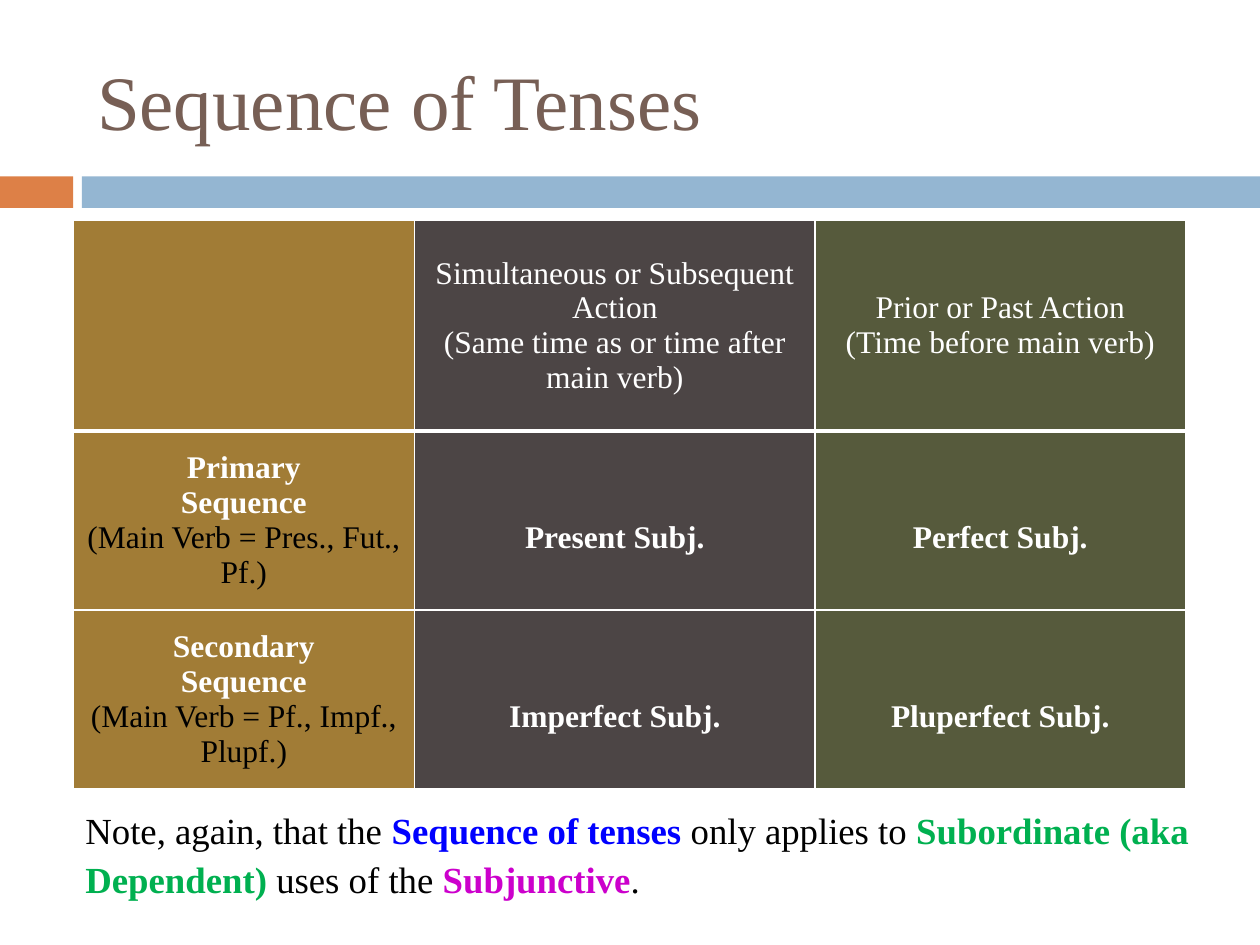
from dataclasses import dataclass

from pptx import Presentation
from pptx.dml.color import RGBColor as RGB
from pptx.enum.shapes import MSO_SHAPE as Shape
from pptx.enum.text import MSO_ANCHOR as Anchor, PP_ALIGN as Align
from pptx.oxml.ns import qn
from pptx.util import Inches, Pt
from lxml.etree import SubElement


@dataclass(frozen=True)
class Theme:
    font: str = "Times New Roman"
    title_size: int = 44
    note_size: int = 21
    cell_size: int = 18
    title: str = "775F55"
    accent: str = "DD8047"
    band: str = "94B6D2"
    columns: tuple = ("A17C36", "4C4545", "565A3C")
    white: str = "FFFFFF"
    black: str = "000000"
    blue: str = "0000FF"
    green: str = "00B050"
    magenta: str = "CC00CC"


class Builder:
    """Holds the theme and the current slide."""

    def __init__(self, theme, slide):
        self.theme = theme
        self.slide = slide

    def style(self, font, size, color, bold=False):
        font.name = self.theme.font
        font.size = Pt(size)
        font.bold = bold
        font.color.rgb = RGB.from_string(color)

    def title(self, text, *box):
        title = self.slide.shapes.title
        title.left, title.top, title.width, title.height = map(Inches, box)
        frame = title.text_frame
        frame.text = text
        frame.vertical_anchor = Anchor.MIDDLE
        heading = frame.paragraphs[0]
        heading.alignment = Align.LEFT
        self.style(heading.font, self.theme.title_size, self.theme.title)

    def bar(self, color, *box):
        bar = self.slide.shapes.add_shape(Shape.RECTANGLE, *map(Inches, box))
        bar.shadow.inherit = False
        bar.fill.solid()
        bar.fill.fore_color.rgb = RGB.from_string(color)
        bar.line.fill.background()

    def borders(self, cell, bottom):
        properties = cell._tc.get_or_add_tcPr()
        edges = {"a:lnL": 1, "a:lnR": 1, "a:lnT": 1, "a:lnB": bottom}
        for index, (edge, width) in enumerate(edges.items()):
            line = SubElement(properties, qn(edge), w=str(Pt(width)))
            fill = SubElement(line, qn("a:solidFill"))
            SubElement(fill, qn("a:srgbClr"), val=self.theme.white)
            properties.insert(index, line)

    def cell(self, cell, lines, fill, bottom):
        cell.fill.solid()
        cell.fill.fore_color.rgb = RGB.from_string(fill)
        cell.vertical_anchor = Anchor.MIDDLE
        self.borders(cell, bottom)
        cell.text = "\n".join(text for text, _, _ in lines)
        for paragraph, (_, color, bold) in zip(cell.text_frame.paragraphs, lines):
            paragraph.alignment = Align.CENTER
            self.style(paragraph.font, self.theme.cell_size, color, bold)

    def table(self, rows, widths, heights, left, top):
        box = map(Inches, (left, top, sum(widths), sum(heights)))
        table = self.slide.shapes.add_table(len(rows), len(widths), *box).table
        table.first_row = table.horz_banding = False
        for column, width in zip(table.columns, widths):
            column.width = Inches(width)
        for r, (row, height) in enumerate(zip(rows, heights)):
            table.rows[r].height = Inches(height)
            for c, (lines, fill) in enumerate(zip(row, self.theme.columns)):
                cell = table.cell(r, c)
                self.cell(cell, lines, fill, bottom=1 if r else 3)
                if r and c:  # the tense names sit half a line below the middle
                    cell.margin_top = Inches(0.33)

    def note(self, pieces, *box):
        frame = self.slide.shapes.add_textbox(*map(Inches, box)).text_frame
        frame.word_wrap = True
        sentence = frame.paragraphs[0]
        sentence.line_spacing = 1.1
        for text, color in pieces:
            run = sentence.add_run()
            run.text = text
            self.style(run.font, self.theme.note_size, color,
                       bold=color != self.theme.black)


def main():
    theme = Theme()
    deck = Presentation()
    deck.slide_width, deck.slide_height = Inches(10), Inches(7.5)
    builder = Builder(theme, deck.slides.add_slide(deck.slide_layouts[5]))

    # Heading and the band below it
    builder.title("Sequence of Tenses", 0.67, 0.25, 8.92, 1.08)
    builder.bar(theme.accent, 0, 1.4, 0.58, 0.25)
    builder.bar(theme.band, 0.65, 1.4, 9.35, 0.25)

    # Table of tenses
    def header(*lines):
        return [(text, theme.white, False) for text in lines]

    def sequence(name, verbs):
        return [(name, theme.white, True), ("Sequence", theme.white, True),
                (f"(Main Verb = {verbs})", theme.black, False)]

    def tense(name):
        return [(f"{name} Subj.", theme.white, True)]

    rows = [
        [[],
         header("Simultaneous or Subsequent Action",
                "(Same time as or time after main verb)"),
         header("Prior or Past Action", "(Time before main verb)")],
        [sequence("Primary", "Pres., Fut., Pf."),
         tense("Present"), tense("Perfect")],
        [sequence("Secondary", "Pf., Impf., Plupf."),
         tense("Imperfect"), tense("Pluperfect")],
    ]
    builder.table(rows, (2.71, 3.18, 2.94), (1.67, 1.42, 1.42), 0.58, 1.75)

    # Closing note
    builder.note([
        ("Note, again, that the ", theme.black),
        ("Sequence of tenses ", theme.blue),
        ("only applies to ", theme.black),
        ("Subordinate (aka Dependent)", theme.green),
        (" uses of the ", theme.black),
        ("Subjunctive", theme.magenta),
        (".", theme.black),
    ], 0.58, 6.33, 9, 0.81)

    deck.save("out.pptx")


if __name__ == "__main__":
    main()
